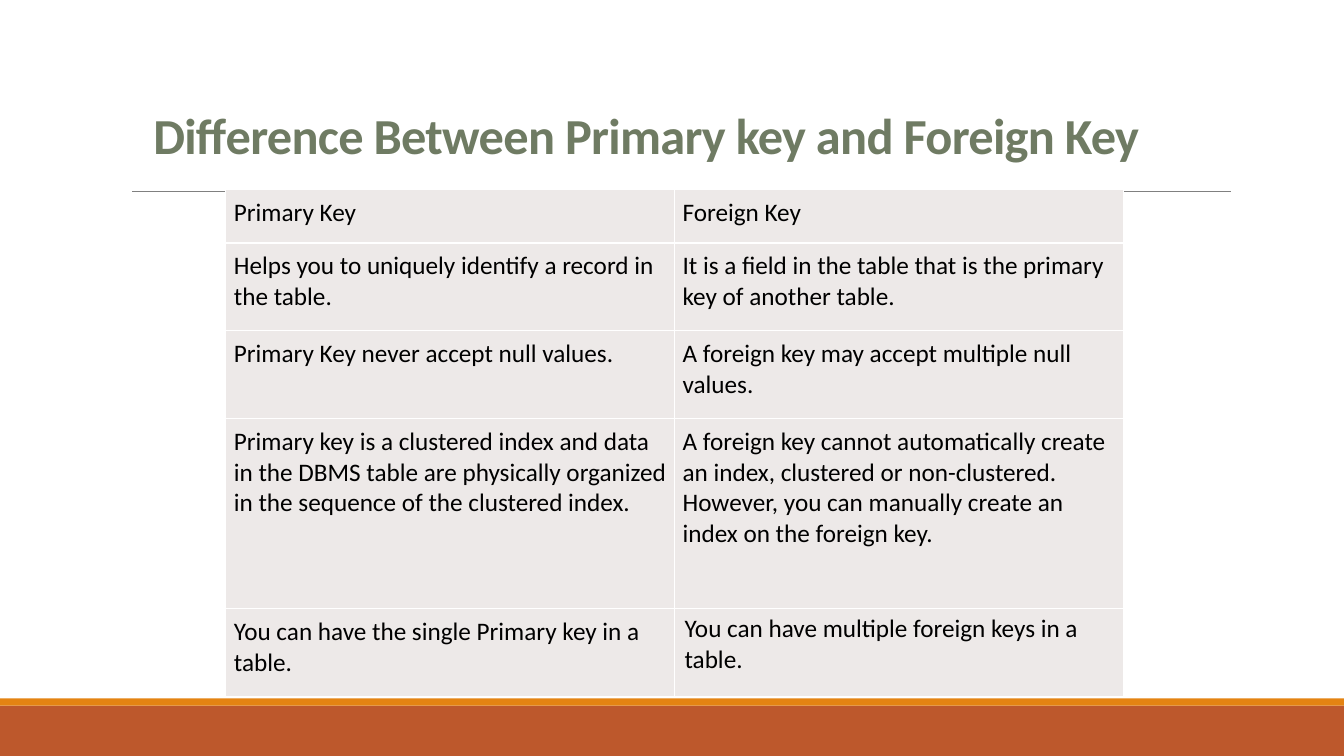
from lxml.etree import SubElement
from pptx import Presentation
from pptx.dml.color import RGBColor
from pptx.enum.shapes import MSO_CONNECTOR as Connector, MSO_SHAPE as Shape
from pptx.enum.text import MSO_ANCHOR as Anchor, MSO_AUTO_SIZE as AutoSize, PP_ALIGN as Align
from pptx.oxml.ns import qn
from pptx.util import Inches, Pt

COLORS = {
    "rust": "BD582C",
    "orange": "E48312",
    "rule": "808080",
    "title": "6F7B63",
    "text": "000000",
    "cell": "EDE9E8",
    "border": "FFFFFF",
}
ROWS = [
    ("Primary Key", "Foreign Key"),
    ("Helps you to uniquely identify a record in the table.",
     "It is a field in the table that is the primary key of another table."),
    ("Primary Key never accept null values.",
     "A foreign key may accept multiple null values."),
    ("Primary key is a clustered index and data in the DBMS table are physically "
     "organized in the sequence of the clustered index.",
     "A foreign key cannot automatically create an index, clustered or non-clustered. "
     "However, you can manually create an index on the foreign key."),
    ("You can have the single Primary key in a table.",
     "You can have multiple foreign keys in a table."),
]
ROW_HEIGHTS = [0.53, 0.87, 0.87, 1.89, 0.87]
COLUMN_WIDTH = 4.45
CELL_INSETS = (0.08, 0.08)
LAST_CELL_INSETS = (0.1, 0.05)


class SlideBuilder:
    font = "Calibri"

    def __init__(self, deck):
        self.page = deck.slides.add_slide(deck.slide_layouts[5])

    def color(self, name):
        return RGBColor.from_string(COLORS[name])

    def style(self, para, size, color, bold=False):
        for span in para.runs:
            span.font.name = self.font
            span.font.size = Pt(size)
            span.font.bold = bold
            span.font.color.rgb = self.color(color)

    def band(self, top, height, color):
        band = self.page.shapes.add_shape(
            Shape.RECTANGLE, 0, Inches(top), Inches(13.33), Inches(height))
        band.shadow.inherit = False
        band.fill.solid()
        band.fill.fore_color.rgb = self.color(color)
        band.line.fill.background()

    def rule(self, left, right, top):
        rule = self.page.shapes.add_connector(
            Connector.STRAIGHT, Inches(left), Inches(top), Inches(right), Inches(top))
        rule.line.color.rgb = self.color("rule")
        rule.line.width = Pt(0.5)
        SubElement(rule._element.spPr, qn("a:effectLst"))

    def title(self, text, left, top, width, height):
        box = self.page.shapes.title
        box.left, box.top = Inches(left), Inches(top)
        box.width, box.height = Inches(width), Inches(height)
        frame = box.text_frame
        frame.text = text
        frame.word_wrap = True
        frame.auto_size = AutoSize.NONE
        frame.vertical_anchor = Anchor.BOTTOM
        para = frame.paragraphs[0]
        para.alignment = Align.LEFT
        para.line_spacing = 0.85
        self.style(para, 36, "title", bold=True)
        for span in para.runs:
            span._r.get_or_add_rPr().set("spc", "-50")

    def cell(self, cell, text, insets):
        side, end = insets
        cell.margin_left = cell.margin_right = Inches(side)
        cell.margin_top = cell.margin_bottom = Inches(end)
        properties = cell._tc.get_or_add_tcPr()
        for edge in ("a:lnL", "a:lnR", "a:lnT", "a:lnB"):
            line = SubElement(properties, qn(edge), w=str(Pt(1)))
            fill = SubElement(line, qn("a:solidFill"))
            SubElement(fill, qn("a:srgbClr"), val=COLORS["border"])
        cell.fill.solid()
        cell.fill.fore_color.rgb = self.color("cell")
        cell.text_frame.text = text
        self.style(cell.text_frame.paragraphs[0], 18, "text")

    def table(self, left, top):
        columns = len(ROWS[0])
        table = self.page.shapes.add_table(
            len(ROWS), columns, Inches(left), Inches(top),
            Inches(COLUMN_WIDTH * columns), Inches(sum(ROW_HEIGHTS))).table
        table.first_row = False
        table.horz_banding = False
        for column in table.columns:
            column.width = Inches(COLUMN_WIDTH)
        for row, height, texts in zip(table.rows, ROW_HEIGHTS, ROWS):
            row.height = Inches(height)
            for cell, text in zip(row.cells, texts):
                self.cell(cell, text, LAST_CELL_INSETS if text == ROWS[-1][-1] else CELL_INSETS)


def main():
    deck = Presentation()
    deck.slide_width, deck.slide_height = Inches(13.33), Inches(7.5)
    slide = SlideBuilder(deck)
    slide.band(7, 0.5, "rust")
    slide.band(6.93, 0.07, "orange")
    slide.rule(1.31, 12.21, 1.9)
    slide.title("Difference Between Primary key and Foreign Key", 1.42, 1.08, 10.72, 0.61)
    slide.table(2.24, 1.88)
    deck.save("out.pptx")


if __name__ == "__main__":
    main()
